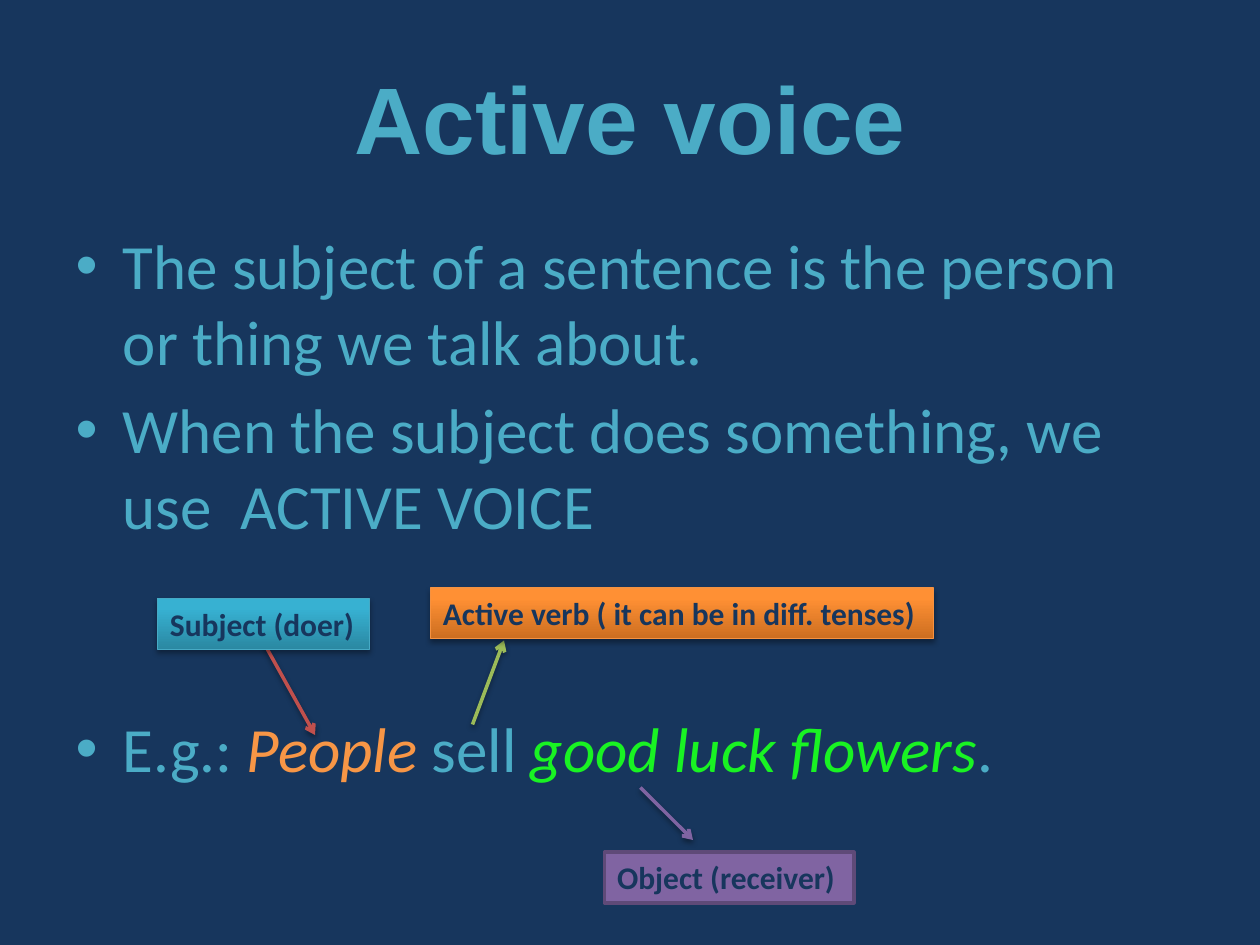
from lxml.etree import SubElement
from pptx import Presentation
from pptx.dml.color import RGBColor
from pptx.enum.shapes import MSO_CONNECTOR, MSO_SHAPE
from pptx.enum.text import MSO_ANCHOR, MSO_AUTO_SIZE, PP_ALIGN
from pptx.oxml.ns import qn
from pptx.util import Pt

NAVY, TEAL, ORANGE, GREEN = "17365D", "4BACC6", "F79646", "19F323"
TITLE = {"name": "Arial", "size": Pt(54), "bold": True}
BODY = {"name": "Calibri", "size": Pt(36)}
LABEL = {"name": "Calibri", "size": Pt(18), "bold": True}

POINTS = [
    (None, [("The subject of a sentence is the person or thing we talk about.", TEAL, False)]),
    (None, [("When the subject does something, we use  ACTIVE VOICE", TEAL, False)]),
    (96, [("E.g.: ", TEAL, False), ("People", ORANGE, True), (" sell ", TEAL, False),
          ("good luck flowers", GREEN, True), (".", TEAL, False)]),
]
ARROWS = [
    ((150, 366), (180, 420), "C0504D"),
    ((270, 414), (288, 366), "9BBB59"),
    ((366, 450), (396, 480), "8064A2"),
]
LABELS = [
    ("Subject (doer)", (90, 342, 121, 29), ("2A88A2", "37B1D2"), "46AAC5", 0.75),
    ("Active verb ( it can be in diff. tenses)", (246, 336, 287.5, 29), ("CC6E20", "FF9034"), "F69240", 0.75),
    ("Object (receiver)", (345.5, 487, 142.5, 29), ("8064A2",), "5F4A78", 2),
]


def rgb(value):
    """Turn a hex string into a colour."""
    return RGBColor.from_string(value)


def set_attrs(obj, values):
    """Set every attribute named in a dict."""
    for name, value in values.items():
        setattr(obj, name, value)


def place(shape, box):
    """Move and size a shape, in points."""
    set_attrs(shape, dict(zip(("left", "top", "width", "height"), map(Pt, box))))


def add_run(p, text, color, font):
    """Add a formatted run to a paragraph."""
    r = p.add_run()
    r.text = text
    set_attrs(r.font, font)
    r.font.color.rgb = rgb(color)


def add_shadow(shape, distance, alpha):
    """Give a shape a soft black shadow straight below it."""
    sp_pr = shape._element.spPr
    for old in sp_pr.findall(qn("a:effectLst")):
        sp_pr.remove(old)
    effects = SubElement(sp_pr, qn("a:effectLst"))
    shadow = SubElement(effects, qn("a:outerShdw"), blurRad=str(Pt(3.1)),
                        dist=str(Pt(distance)), dir="5400000", rotWithShape="0")
    black = SubElement(shadow, qn("a:srgbClr"), val="000000")
    SubElement(black, qn("a:alpha"), val=str(alpha * 1000))


def fill_title(sp):
    """Write the slide title."""
    place(sp, (36, 21.6, 648, 90))
    set_attrs(sp.text_frame, {"vertical_anchor": MSO_ANCHOR.MIDDLE, "auto_size": MSO_AUTO_SIZE.NONE})
    p = sp.text_frame.paragraphs[0]
    p.alignment = PP_ALIGN.CENTER
    add_run(p, "Active voice", TEAL, TITLE)


def fill_body(sp):
    """Write the bulleted points."""
    place(sp, (36, 126, 648, 356.4))
    tf = sp.text_frame
    tf.auto_size = MSO_AUTO_SIZE.NONE
    for i, (before, runs) in enumerate(POINTS):
        p = tf.add_paragraph() if i else tf.paragraphs[0]
        if before:
            p.space_before = Pt(before)
        for text, color, italic in runs:
            add_run(p, text, color, {**BODY, "italic": italic})


def add_arrow(s, start, end, color):
    """Draw an arrow between two points."""
    line = s.shapes.add_connector(MSO_CONNECTOR.STRAIGHT, *map(Pt, start + end))
    line.line.color.rgb = rgb(color)
    line.line.width = Pt(2)
    SubElement(line.line._get_or_add_ln(), qn("a:tailEnd"), type="arrow")
    add_shadow(line, 1.6, 38)


def add_label(s, text, box, fills, outline, width):
    """Draw a label, with a gradient and shadow if it has two fills."""
    sp = s.shapes.add_shape(MSO_SHAPE.RECTANGLE, *map(Pt, box))
    sp.line.color.rgb = rgb(outline)
    sp.line.width = Pt(width)
    if len(fills) == 2:
        sp.fill.gradient()
        sp.fill.gradient_angle = 90
        for stop, color, position in zip(sp.fill.gradient_stops, fills, (0, 0.8)):
            stop.color.rgb = rgb(color)
            stop.position = position
        add_shadow(sp, 1.8, 35)
    else:
        sp.fill.solid()
        sp.fill.fore_color.rgb = rgb(fills[0])
        sp.shadow.inherit = False
    tf = sp.text_frame
    set_attrs(tf, {"word_wrap": False, "vertical_anchor": MSO_ANCHOR.TOP,
                   "auto_size": MSO_AUTO_SIZE.SHAPE_TO_FIT_TEXT})
    p = tf.paragraphs[0]
    p.alignment = PP_ALIGN.LEFT
    add_run(p, text, NAVY, LABEL)


def main():
    """Build the slide and save it."""
    prs = Presentation()
    set_attrs(prs, {"slide_width": Pt(720), "slide_height": Pt(540)})
    s = prs.slides.add_slide(prs.slide_layouts[1])
    s.background.fill.solid()
    s.background.fill.fore_color.rgb = rgb(NAVY)
    fill_title(s.shapes.title)
    fill_body(s.placeholders[1])
    for arrow, label in zip(ARROWS, LABELS):
        add_arrow(s, *arrow)
        add_label(s, *label)
    prs.save("out.pptx")


if __name__ == "__main__":
    main()
